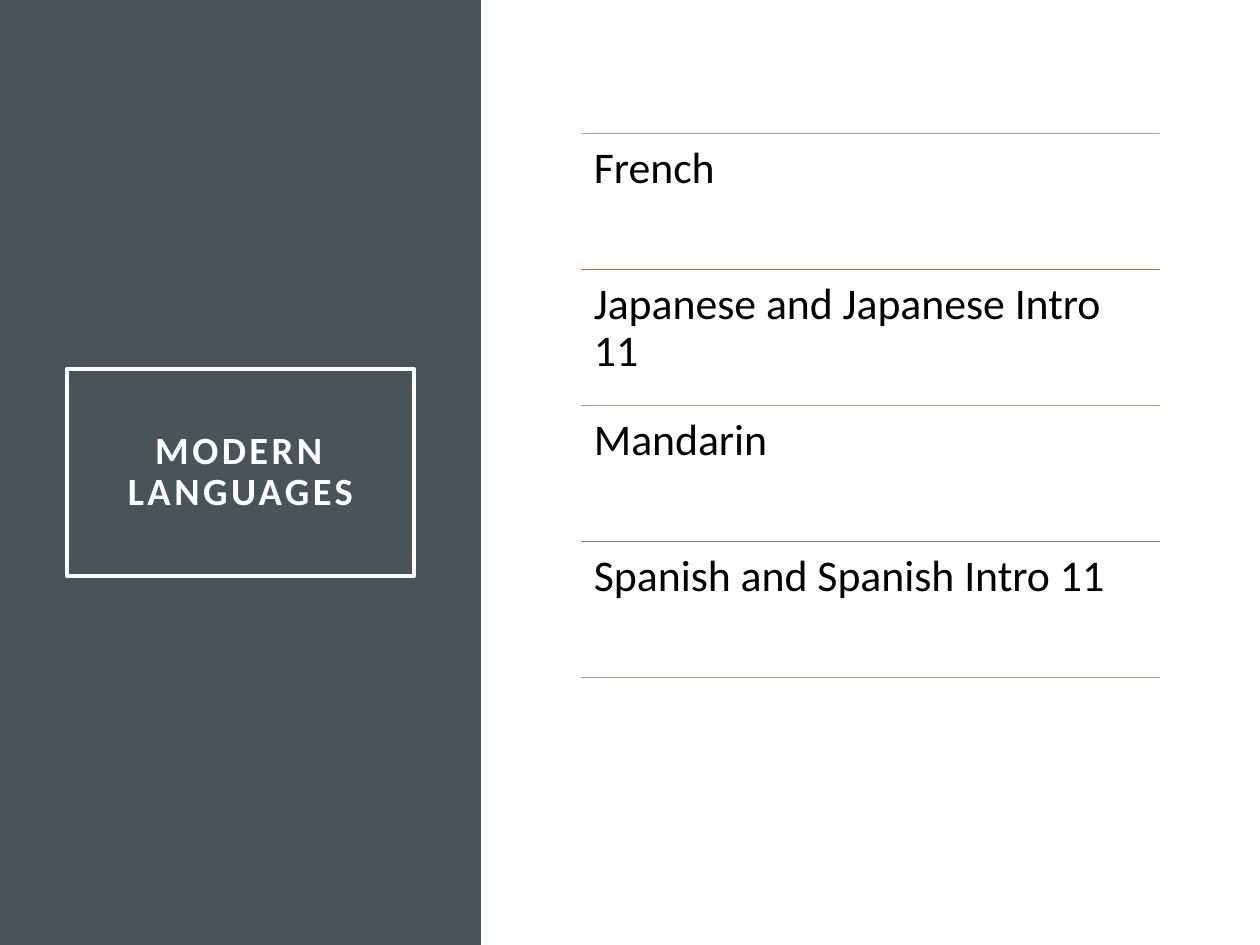
from dataclasses import dataclass

from lxml import etree
from pptx import Presentation
from pptx import util as u
from pptx.dml.color import RGBColor
from pptx.enum import shapes, text
from pptx.oxml import ns

SLIDE_WIDTH, SLIDE_HEIGHT = 1260, 945
PANEL_WIDTH = 481
LIST_LEFT, LIST_TOP, LIST_WIDTH, ROW_HEIGHT = 581, 133, 579, 136
TITLE_INSET, ROW_INSET = 25, 13
FONT = "Calibri"
COLORS = {
    "panel": "4A5356",
    "white": "FFFFFF",
    "black": "000000",
    "mist": "9BAFB5",
    "rust": "C96731",
    "sage": "9CA383",
    "olive": "87795D",
    "stone": "A0988C",
}


@dataclass(frozen=True)
class Language:
    name: str
    rule_color: str


LANGUAGES = [
    Language("French", "mist"),
    Language("Japanese and Japanese Intro 11", "rust"),
    Language("Mandarin", "sage"),
    Language("Spanish and Spanish Intro 11", "olive"),
]


def px(length: int) -> u.Emu:
    return u.Emu(round(length * 914400 / 126))


def color(name: str) -> RGBColor:
    return RGBColor.from_string(COLORS[name])


def format_text(shape, inset: int, size: int, font_color: str, anchor) -> None:
    frame = shape.text_frame
    frame.word_wrap = True
    frame.auto_size = text.MSO_AUTO_SIZE.NONE
    frame.vertical_anchor = anchor
    frame.margin_left = frame.margin_right = px(inset)
    frame.margin_top = frame.margin_bottom = px(inset)
    paragraph = frame.paragraphs[0]
    paragraph.line_spacing = 0.9
    font = paragraph.runs[0].font
    font.name = FONT
    font.size = u.Pt(size)
    font.color.rgb = color(font_color)


def add_panel(slide) -> None:
    panel = slide.shapes.add_shape(
        shapes.MSO_SHAPE.RECTANGLE, 0, 0, px(PANEL_WIDTH), px(SLIDE_HEIGHT)
    )
    panel.shadow.inherit = False
    panel.fill.solid()
    panel.fill.fore_color.rgb = color("panel")
    panel.line.fill.background()
    slide.shapes._spTree.remove(panel._element)
    slide.shapes._spTree.insert(2, panel._element)


def add_title(slide) -> None:
    title = slide.shapes.title
    title.left, title.top = px(67), px(369)
    title.width, title.height = px(347), px(207)
    title.line.color.rgb = color("white")
    title.line.width = u.Pt(2.5)
    title.text_frame.text = "MODERN LANGUAGES"
    format_text(title, TITLE_INSET, 22, "white", text.MSO_ANCHOR.MIDDLE)
    paragraph = title.text_frame.paragraphs[0]
    paragraph.alignment = text.PP_ALIGN.CENTER
    run = paragraph.runs[0]
    run.font.bold = True
    run._r.get_or_add_rPr().set("spc", "200")


def add_rule(group, top: int, rule_color: str) -> None:
    rule = group.shapes.add_connector(
        shapes.MSO_CONNECTOR.STRAIGHT,
        px(LIST_LEFT), px(top), px(LIST_LEFT + LIST_WIDTH), px(top),
    )
    rule.line.color.rgb = color(rule_color)
    rule.line.width = u.Pt(0.5)
    etree.SubElement(rule._element.spPr, ns.qn("a:effectLst"))


def add_language(group, top: int, language: Language) -> None:
    add_rule(group, top, language.rule_color)
    box = group.shapes.add_textbox(
        px(LIST_LEFT), px(top), px(LIST_WIDTH), px(ROW_HEIGHT)
    )
    box.text_frame.text = language.name
    format_text(box, ROW_INSET, 25, "black", text.MSO_ANCHOR.TOP)


def main() -> None:
    presentation = Presentation()
    presentation.slide_width = px(SLIDE_WIDTH)
    presentation.slide_height = px(SLIDE_HEIGHT)
    slide = presentation.slides.add_slide(presentation.slide_layouts[5])
    add_panel(slide)
    add_title(slide)
    group = slide.shapes.add_group_shape()
    for row, language in enumerate(LANGUAGES):
        add_language(group, LIST_TOP + row * ROW_HEIGHT, language)
    add_rule(group, LIST_TOP + len(LANGUAGES) * ROW_HEIGHT, "stone")
    presentation.save("out.pptx")


if __name__ == "__main__":
    main()
